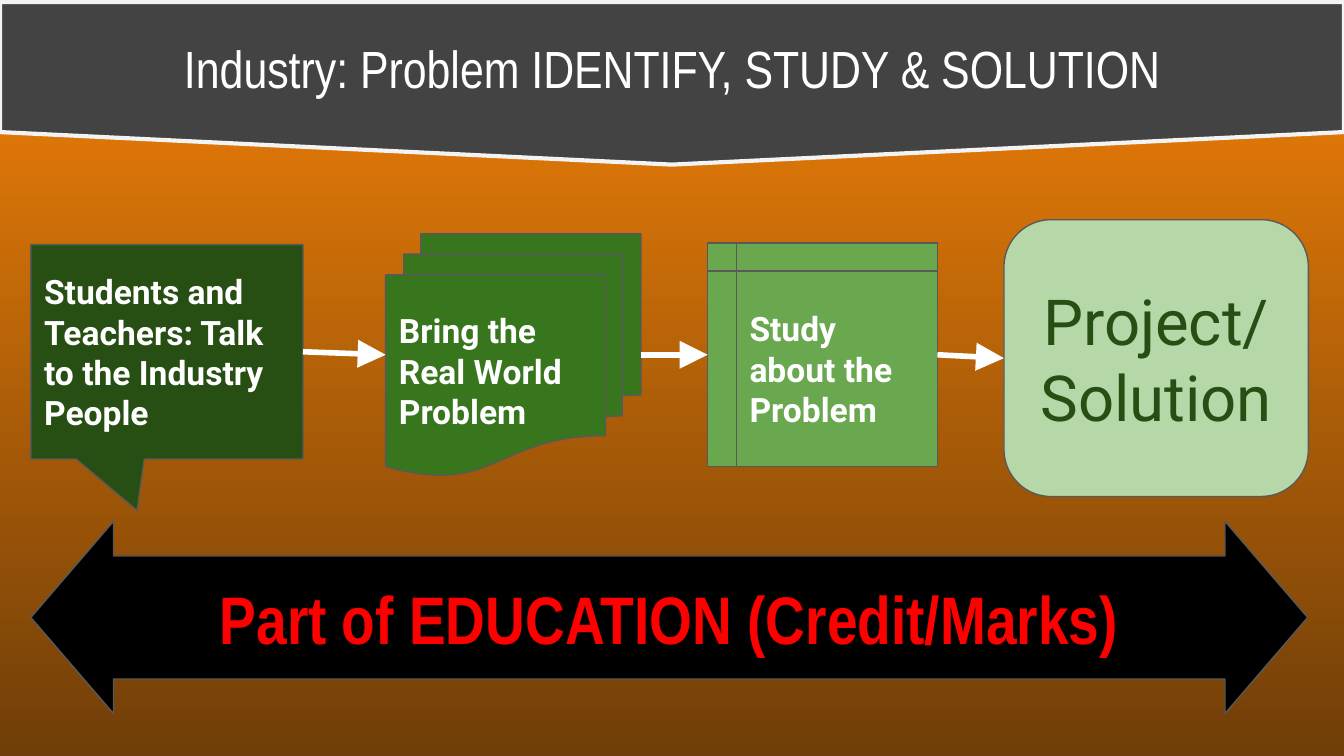
from dataclasses import dataclass
from itertools import pairwise

from lxml.etree import SubElement
from pptx import Presentation
from pptx.dml.color import RGBColor
from pptx.enum.shapes import MSO_CONNECTOR, MSO_SHAPE
from pptx.enum.text import MSO_ANCHOR, PP_ALIGN
from pptx.oxml.ns import qn
from pptx.shapes.autoshape import Shape
from pptx.slide import Slide
from pptx.util import Pt

EMU_PER_PX = 4572  # 200 px to the inch
LEFT_SITE, RIGHT_SITE = 1, 3
WHITE, DARK_GREEN, OUTLINE = "FFFFFF", "274E13", "595959"


@dataclass(frozen=True)
class TextStyle:
    font: str
    size: int
    color: str
    bold: bool = False
    align: PP_ALIGN = PP_ALIGN.CENTER


@dataclass(frozen=True)
class Block:
    geometry: MSO_SHAPE
    box: tuple[int, int, int, int]
    fill: str
    text: str = ""
    style: TextStyle | None = None
    adjustments: tuple[float, ...] = ()
    line: str = OUTLINE
    line_width: float = 0.75


TITLE_STYLE = TextStyle("Arial Narrow", 28, WHITE)
STEP_STYLE = TextStyle("Roboto", 18, WHITE, True, PP_ALIGN.LEFT)
RESULT_STYLE = TextStyle("Roboto", 34, DARK_GREEN)
CREDIT_STYLE = TextStyle("Arial Narrow", 36, "FF0000", True)

BANNER = Block(MSO_SHAPE.FLOWCHART_OFFPAGE_CONNECTOR, (0, 3, 2000, 242), "434343",
               line="F3F3F3", line_width=2.25)
STEPS = (
    Block(MSO_SHAPE.RECTANGULAR_CALLOUT, (46, 364, 405, 319), DARK_GREEN,
          "Students and Teachers: Talk to the Industry People", STEP_STYLE, (-0.11, 0.74)),
    Block(MSO_SHAPE.FLOWCHART_MULTIDOCUMENT, (574, 348, 380, 360), "38761D",
          "Bring the Real World Problem", STEP_STYLE),
    Block(MSO_SHAPE.FLOWCHART_INTERNAL_STORAGE, (1053, 362, 342, 332), "6AA84F",
          "Study about the Problem", STEP_STYLE),
    Block(MSO_SHAPE.ROUNDED_RECTANGLE, (1494, 327, 453, 412), "B6D7A8",
          "Project/ Solution", RESULT_STYLE, (0.17,)),
)
CREDIT_ARROW = Block(MSO_SHAPE.LEFT_RIGHT_ARROW, (46, 776, 1900, 286), "000000",
                     "Part of EDUCATION (Credit/Marks)", CREDIT_STYLE, (0.64, 0.43))


def px(value: int) -> int:
    return value * EMU_PER_PX


def rgb(color: str) -> RGBColor:
    return RGBColor.from_string(color)


def write_text(shape: Shape, text: str, style: TextStyle) -> None:
    frame = shape.text_frame
    frame_format = {"word_wrap": True, "vertical_anchor": MSO_ANCHOR.MIDDLE}
    frame_format |= {f"margin_{side}": px(20) for side in ("left", "top", "right", "bottom")}
    for name, value in frame_format.items():
        setattr(frame, name, value)
    frame.text = text
    paragraph = frame.paragraphs[0]
    paragraph.alignment = style.align
    font = paragraph.runs[0].font
    font_format = {"name": style.font, "size": Pt(style.size), "bold": style.bold}
    for name, value in font_format.items():
        setattr(font, name, value)
    font.color.rgb = rgb(style.color)


def add_block(slide: Slide, block: Block) -> Shape:
    shape = slide.shapes.add_shape(block.geometry, *map(px, block.box))
    shape.shadow.inherit = False
    shape.fill.solid()
    shape.fill.fore_color.rgb = rgb(block.fill)
    shape.line.color.rgb = rgb(block.line)
    shape.line.width = Pt(block.line_width)
    for index, value in enumerate(block.adjustments):
        shape.adjustments[index] = value
    if block.style:
        write_text(shape, block.text, block.style)
    return shape


def add_arrow(slide: Slide, source: Shape, target: Shape) -> None:
    arrow = slide.shapes.add_connector(MSO_CONNECTOR.STRAIGHT, 0, 0, 0, 0)
    arrow.begin_connect(source, RIGHT_SITE)
    arrow.end_connect(target, LEFT_SITE)
    arrow.line.color.rgb = rgb(WHITE)
    arrow.line.width = Pt(3)
    SubElement(arrow.line._get_or_add_ln(), qn("a:tailEnd"),
               type="triangle", w="lg", len="lg")
    SubElement(arrow._element.spPr, qn("a:effectLst"))


def paint_background(slide: Slide, top: str, bottom: str) -> None:
    fill = slide.background.fill
    fill.gradient()
    fill.gradient_angle = 270
    for stop, color, position in zip(fill.gradient_stops, (top, bottom), (0, 1)):
        stop.color.rgb = rgb(color)
        stop.position = position


def place_title(slide: Slide, text: str) -> None:
    """Lay the title over the straight-sided part of the banner."""
    title = slide.shapes.title
    box = {"left": 0, "top": 3, "width": 2000, "height": 194}
    for name, value in box.items():
        setattr(title, name, px(value))
    write_text(title, text, TITLE_STYLE)
    slide.shapes._spTree.append(title._element)  # bring in front of the banner


def main() -> None:
    presentation = Presentation()
    presentation.slide_width, presentation.slide_height = px(2000), px(1125)
    slide = presentation.slides.add_slide(presentation.slide_layouts[5])
    paint_background(slide, "F48208", "703E08")
    add_block(slide, BANNER)
    place_title(slide, "Industry: Problem IDENTIFY, STUDY & SOLUTION")
    steps = [add_block(slide, step) for step in STEPS]
    for source, target in pairwise(steps):
        add_arrow(slide, source, target)
    add_block(slide, CREDIT_ARROW)
    presentation.save("out.pptx")


if __name__ == "__main__":
    main()
